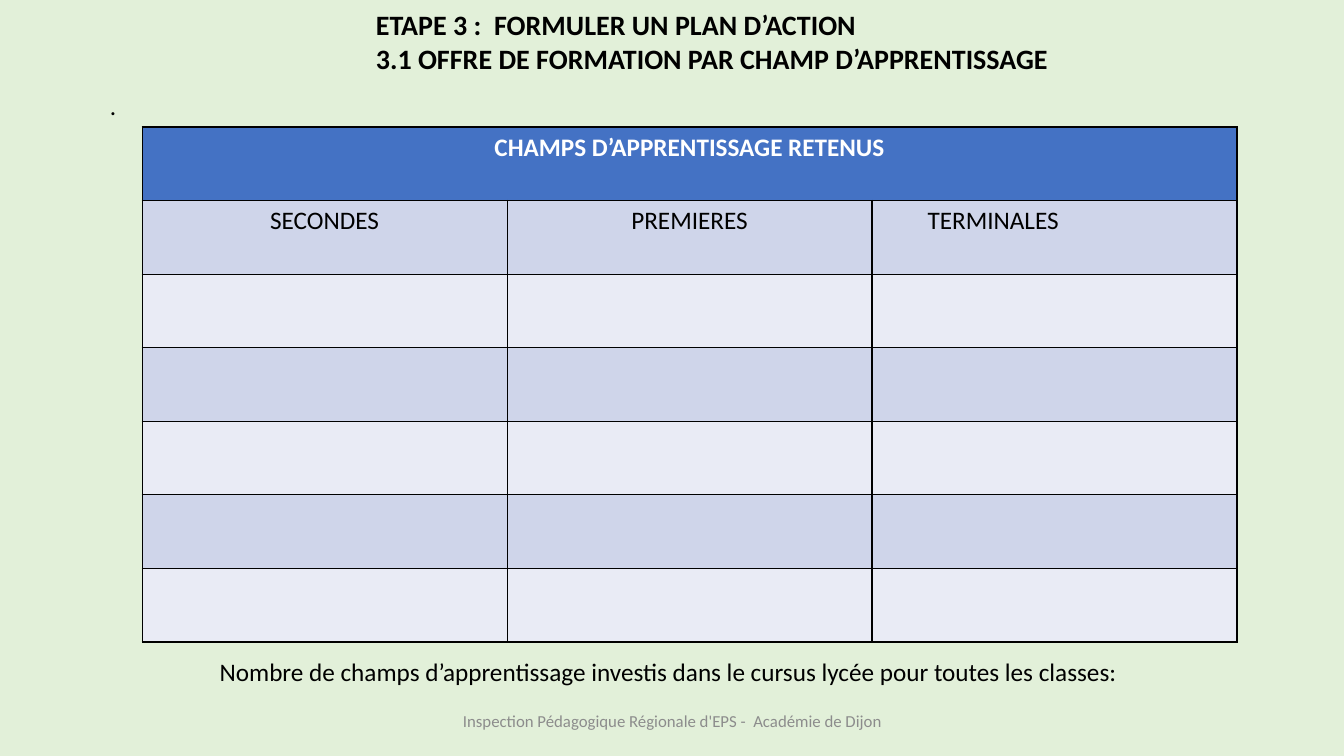
"""Build the slide on learning fields offered per school year."""
from dataclasses import dataclass

from lxml import etree
from pptx import Presentation
from pptx import util as u
from pptx.dml.color import RGBColor
from pptx.enum import text as t
from pptx.oxml import ns

BLACK = RGBColor(0x00, 0x00, 0x00)
WHITE = RGBColor(0xFF, 0xFF, 0xFF)
GREEN = RGBColor(0xE2, 0xF0, 0xD9)
GREY = RGBColor(0x8C, 0x8C, 0x8C)
BLUE = RGBColor(0x44, 0x72, 0xC4)
BANDS = (RGBColor(0xE9, 0xEB, 0xF5), RGBColor(0xCF, 0xD5, 0xEA))
FONT = "Calibri"
ROWS, COLS = 7, 3
COL_W, ROW_H = 3.62, 0.73
LEFT, MID = t.PP_ALIGN.LEFT, t.PP_ALIGN.CENTER


@dataclass
class Label:
    left: float
    top: float
    width: float
    height: float
    lines: tuple[str, ...]
    size: int = 18
    color: RGBColor = BLACK
    bold: bool = False
    align: t.PP_ALIGN = LEFT
    anchor: t.MSO_ANCHOR = t.MSO_ANCHOR.TOP


@dataclass
class Head:
    row: int
    col: int
    words: str
    color: RGBColor = BLACK
    bold: bool = False
    align: t.PP_ALIGN = MID
    indent: float = 0.1


LABELS = (
    Label(0.99, 0.85, 11.71, 0.4, (".",)),
    Label(3.63, 0.03, 9.7, 1.78,
          ("ETAPE 3 :  FORMULER UN PLAN D’ACTION",
           "3.1 OFFRE DE FORMATION PAR CHAMP D’APPRENTISSAGE"),
          size=20, bold=True),
    Label(2.08, 6.46, 9.92, 0.4,
          ("Nombre de champs d’apprentissage investis dans le cursus lycée "
           "pour toutes les classes:",)),
    Label(4.42, 6.95, 4.5, 0.4,
          ("Inspection Pédagogique Régionale d'EPS -  Académie de Dijon",),
          size=12, color=GREY, align=MID, anchor=t.MSO_ANCHOR.MIDDLE),
)
HEADS = (
    Head(0, 0, "CHAMPS D’APPRENTISSAGE RETENUS", WHITE, True),
    Head(1, 0, "SECONDES"),
    Head(1, 1, "PREMIERES"),
    Head(1, 2, "TERMINALES", align=LEFT, indent=0.55),
)


def add_run(para, words: str, size: int, color: RGBColor, bold: bool) -> None:
    """Add one styled run to a paragraph."""
    run = para.add_run()
    run.text = words
    run.font.name, run.font.size = FONT, u.Pt(size)
    run.font.bold, run.font.color.rgb = bold, color


def add_label(slide, label: Label) -> None:
    """Draw a text box with one paragraph per line."""
    box = slide.shapes.add_textbox(
        u.Inches(label.left), u.Inches(label.top),
        u.Inches(label.width), u.Inches(label.height))
    frame = box.text_frame
    frame.word_wrap = True
    frame.vertical_anchor = label.anchor
    for i, line in enumerate(label.lines):
        para = frame.add_paragraph() if i else frame.paragraphs[0]
        para.alignment = label.align
        add_run(para, line, label.size, label.color, label.bold)


def add_edges(cell) -> None:
    """Give a cell thin black borders on all sides."""
    props = cell._tc.get_or_add_tcPr()
    for side in ("lnL", "lnR", "lnT", "lnB"):
        line = etree.SubElement(props, ns.qn(f"a:{side}"), w=str(u.Pt(1)))
        fill = etree.SubElement(line, ns.qn("a:solidFill"))
        etree.SubElement(fill, ns.qn("a:srgbClr"), val=str(BLACK))


def add_grid(slide) -> None:
    """Draw the table of learning fields."""
    grid = slide.shapes.add_table(
        ROWS, COLS, u.Inches(1.41), u.Inches(1.26),
        u.Inches(COLS * COL_W), u.Inches(ROWS * ROW_H)).table
    for col in grid.columns:
        col.width = u.Inches(COL_W)
    for i, row in enumerate(grid.rows):
        row.height = u.Inches(ROW_H)
        for cell in row.cells:
            add_edges(cell)
            cell.fill.solid()
            cell.fill.fore_color.rgb = BANDS[i % 2] if i else BLUE
    grid.cell(0, 0).merge(grid.cell(0, COLS - 1))
    for head in HEADS:
        cell = grid.cell(head.row, head.col)
        cell.margin_left = u.Inches(head.indent)
        para = cell.text_frame.paragraphs[0]
        para.alignment = head.align
        add_run(para, head.words, 18, head.color, head.bold)


def main() -> None:
    """Build and save the slide."""
    deck = Presentation()
    deck.slide_width, deck.slide_height = u.Inches(13.33), u.Inches(7.5)
    slide = deck.slides.add_slide(deck.slide_layouts[6])
    slide.background.fill.solid()
    slide.background.fill.fore_color.rgb = GREEN
    add_grid(slide)
    for label in LABELS:
        add_label(slide, label)
    deck.save("out.pptx")


if __name__ == "__main__":
    main()
